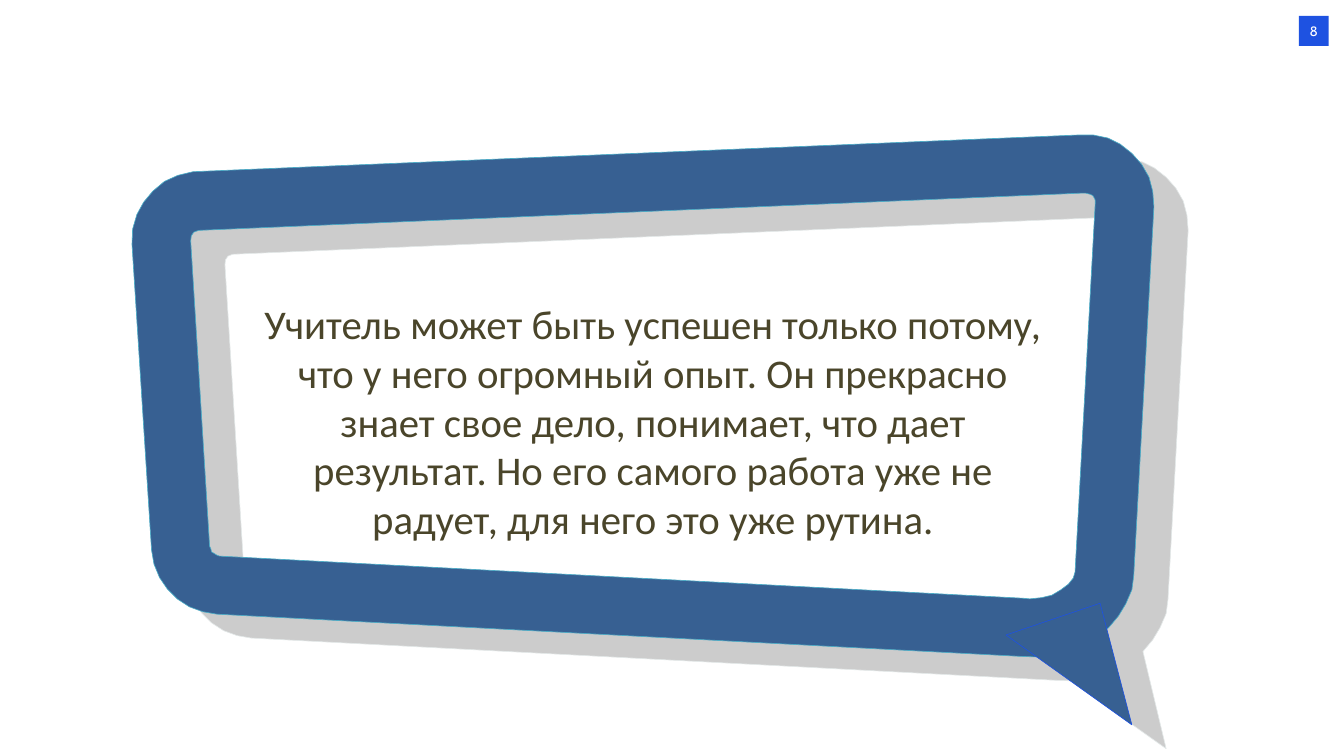
"""Build a slide with a quotation inside a slanted speech-bubble frame."""
from pptx import Presentation
from pptx.dml.color import RGBColor
from pptx.enum.shapes import MSO_SHAPE
from pptx.enum.text import MSO_ANCHOR, PP_ALIGN
from pptx.util import Inches, Pt

WHITE = RGBColor(0xFF, 0xFF, 0xFF)
BLUE = RGBColor(0x1E, 0x52, 0xE1)
FRAME_BLUE = RGBColor(0x37, 0x60, 0x92)
FRAME_EDGE = RGBColor(0x4B, 0xAC, 0xC6)
SHADOW_GREY = RGBColor(0xCC, 0xCC, 0xCC)
SHADOW_EDGE = RGBColor(0xE3, 0xE8, 0xE8)
TEXT_BROWN = RGBColor(0x4A, 0x45, 0x2A)

QUOTE = (
    "Учитель может быть успешен только потому, что у него огромный опыт. "
    "Он прекрасно знает свое дело, понимает, что дает результат. "
    "Но его самого работа уже не радует, для него это уже рутина."
)

INNER_EDGE = [
    (17.76, 3.16), (17.71, 3.16), (3.25, 3.77), (3.17, 3.8), (3.13, 3.86),
    (3.12, 3.94), (3.43, 8.94), (3.45, 8.98), (3.46, 9.03), (3.51, 9.06),
    (3.54, 9.08), (3.59, 9.1), (16.75, 9.79), (16.85, 9.8), (17.04, 9.78),
    (17.21, 9.74), (17.36, 9.65), (17.48, 9.56), (17.56, 9.46), (17.59, 9.36),
    (17.92, 3.33), (17.92, 3.28), (17.91, 3.25), (17.88, 3.2), (17.84, 3.18),
]
RIGHT_SIDE = [
    (17.89, 2.21), (18.13, 2.26), (18.33, 2.36), (18.52, 2.51), (18.68, 2.69),
    (18.8, 2.9), (18.86, 3.13), (18.88, 3.38), (18.55, 9.42), (18.52, 9.65),
    (18.42, 9.88), (18.3, 10.08), (18.14, 10.27),
]
BOTTOM_CORNER = [(17.94, 10.42), (17.72, 10.55), (17.48, 10.65), (17.22, 10.71)]
LEFT_SIDE = [
    (16.96, 10.75), (16.69, 10.74), (3.55, 10.05), (3.32, 10.01), (3.1, 9.93),
    (2.9, 9.8), (2.74, 9.64), (2.61, 9.45), (2.52, 9.23), (2.48, 9),
    (2.16, 4), (2.17, 3.75), (2.24, 3.51), (2.35, 3.31), (2.5, 3.13),
    (2.69, 2.97), (2.91, 2.87), (3.16, 2.81), (17.63, 2.21),
]
TAIL_TIP = (18.52, 11.86)
TAIL = [(18, 9.87), TAIL_TIP, (16.46, 10.39)]


def add_outline(contours, fill, edge, shift=(0, 0)):
    """Draw closed contours, given in inches, as one filled shape."""
    moved = [
        [(round((x + shift[0]) * 100), round((y + shift[1]) * 100)) for x, y in contour]
        for contour in contours
    ]
    builder = slide.shapes.build_freeform(*moved[0][0], scale=Inches(0.01))
    builder.add_line_segments(moved[0][1:], close=True)
    for contour in moved[1:]:
        builder.move_to(*contour[0])
        builder.add_line_segments(contour[1:], close=True)
    shape = builder.convert_to_shape()
    shape.shadow.inherit = False
    shape.fill.solid()
    shape.fill.fore_color.rgb = fill
    shape.line.color.rgb = edge
    shape.line.width = Pt(0)
    return shape


def write_text(shape, text, size, font_name, color, **frame_format):
    """Write one centred paragraph into a shape."""
    frame = shape.text_frame
    frame_format = {"word_wrap": True, "vertical_anchor": MSO_ANCHOR.MIDDLE, **frame_format}
    for name, value in frame_format.items():
        setattr(frame, name, value)
    paragraph = frame.paragraphs[0]
    paragraph.alignment = PP_ALIGN.CENTER
    run = paragraph.add_run()
    run.text = text
    for name, value in {"size": Pt(size), "name": font_name}.items():
        setattr(run.font, name, value)
    run.font.color.rgb = color


presentation = Presentation()
presentation.slide_width = Inches(21.99)
presentation.slide_height = Inches(12.37)
slide = presentation.slides.add_slide(presentation.slide_layouts[6])

page_number = slide.shapes.add_shape(
    MSO_SHAPE.RECTANGLE, Inches(21.25), Inches(0.26), Inches(0.49), Inches(0.49)
)
page_number.shadow.inherit = False
page_number.fill.solid()
page_number.fill.fore_color.rgb = BLUE
page_number.line.fill.background()
no_margins = dict.fromkeys(("margin_left", "margin_top", "margin_right", "margin_bottom"), 0)
write_text(page_number, "8", 16, "Cabin", WHITE, **no_margins)

shadow_edge = RIGHT_SIDE + [TAIL_TIP] + LEFT_SIDE
add_outline([INNER_EDGE, shadow_edge], SHADOW_GREY, SHADOW_EDGE, shift=(0.56, 0.39))

frame_edge = RIGHT_SIDE + BOTTOM_CORNER + LEFT_SIDE
bubble = add_outline([INNER_EDGE, frame_edge], FRAME_BLUE, FRAME_EDGE)
write_text(
    bubble, QUOTE, 48, "Calibri", TEXT_BROWN,
    margin_left=Inches(1.98), margin_right=Inches(1.65),
    margin_top=Inches(0.89), margin_bottom=Inches(0.08),
)

add_outline([TAIL], FRAME_BLUE, BLUE)

presentation.save("out.pptx")
